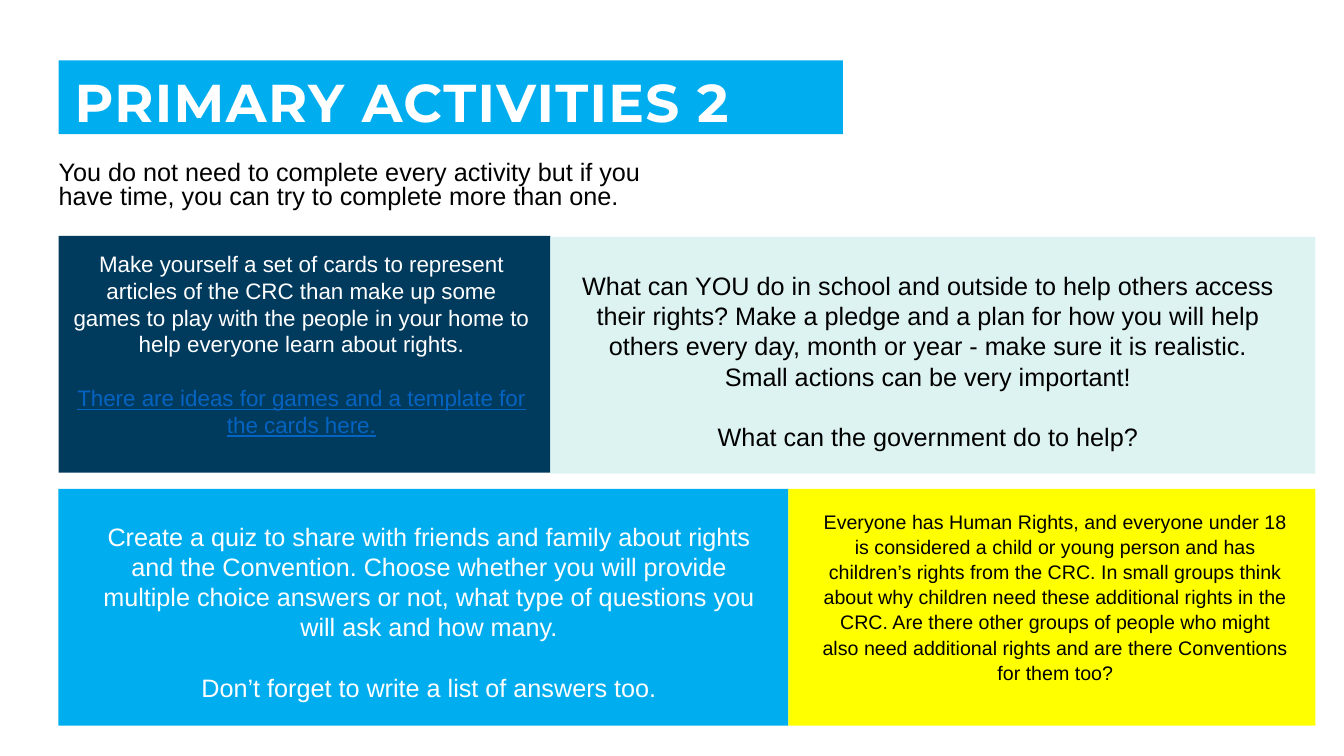
from dataclasses import dataclass

from lxml.etree import SubElement
from pptx import Presentation
from pptx.dml.color import RGBColor
from pptx.enum.shapes import MSO_SHAPE
from pptx.enum.text import MSO_ANCHOR, MSO_AUTO_SIZE, PP_ALIGN
from pptx.oxml.ns import qn
from pptx.util import Pt

NAVY, BLUE, MINT, YELLOW = "003B5E", "00AEEF", "DDF3F1", "FFFF00"
WHITE, BLACK, LINK = "FFFFFF", "000000", "0563C1"
LEFT = 41.8
PANEL_HEIGHT = 169.2
LINE_HEIGHT = 1.2  # one text line as a multiple of the font size


@dataclass
class Panel:
    left: float
    top: float
    width: float
    fill: str


@dataclass
class Para:
    text: str
    color: str
    underline: bool = False


@dataclass
class Activity:
    left: float
    top: float
    width: float
    height: float
    size: float
    paras: list[Para]
    spacing: float = 1.0


PANELS = [
    Panel(LEFT, 168.5, 351.4, NAVY),
    Panel(LEFT, 349.2, 521.3, BLUE),
    Panel(393.2, 169.2, 546.4, MINT),
    Panel(563.1, 349.2, 376.5, YELLOW),
]

ACTIVITIES = [
    Activity(56.2, 368.6, 500.4, 138.2, 18, [
        Para("Create a quiz to share with friends and family about rights and the "
             "Convention. Choose whether you will provide multiple choice answers or "
             "not, what type of questions you will ask and how many.", WHITE),
        Para("Don’t forget to write a list of answers too.", WHITE),
    ]),
    Activity(578.9, 359.3, 349.9, 133.2, 14, [
        Para("Everyone has Human Rights, and everyone under 18 is considered a child or "
             "young person and has children’s rights from the CRC. In small groups think "
             "about why children need these additional rights in the CRC. Are there other "
             "groups of people who might also need additional rights and are there "
             "Conventions for them too?", BLACK),
    ], spacing=1.07),
    Activity(407.5, 189.4, 510.5, 138.2, 18, [
        Para("What can YOU do in school and outside to help others access their rights? "
             "Make a pledge and a plan for how you will help others every day, month or "
             "year - make sure it is realistic. Small actions can be very important!", BLACK),
        Para("What can the government do to help?", BLACK),
    ]),
    Activity(43.2, 175, 344.2, 143.3, 16, [
        Para("Make yourself a set of cards to represent articles of the CRC than make up "
             "some games to play with the people in your home to help everyone learn "
             "about rights.", WHITE),
        Para("There are ideas for games and a template for the cards here.", LINK, True),
    ]),
]


def rgb(color: str) -> RGBColor:
    return RGBColor.from_string(color)


def place(sp, left: float, top: float, width: float, height: float) -> None:
    sp.left, sp.top, sp.width, sp.height = Pt(left), Pt(top), Pt(width), Pt(height)


def set_frame(tf, insets: tuple[float, float, float, float], anchor=MSO_ANCHOR.TOP) -> None:
    tf.word_wrap = True
    tf.auto_size = MSO_AUTO_SIZE.NONE
    tf.vertical_anchor = anchor
    tf.margin_left, tf.margin_top, tf.margin_right, tf.margin_bottom = map(Pt, insets)


def add_run(p, text: str, size: float, color: str, font: str = "Arial"):
    r = p.add_run()
    r.text = text
    r.font.name, r.font.size = font, Pt(size)
    r.font.color.rgb = rgb(color)
    return r


def format_para(p, align, spacing: float, before: float = 0) -> None:
    p.alignment = align
    p.line_spacing = spacing
    p.space_before = Pt(before)


def add_panel(slide, panel: Panel) -> None:
    sp = slide.shapes.add_shape(MSO_SHAPE.RECTANGLE, Pt(panel.left), Pt(panel.top),
                                Pt(panel.width), Pt(PANEL_HEIGHT))
    sp.shadow.inherit = False
    sp.fill.solid()
    sp.fill.fore_color.rgb = rgb(panel.fill)
    sp.line.fill.background()


def add_activity(slide, act: Activity) -> None:
    sp = slide.shapes.add_textbox(Pt(act.left), Pt(act.top), Pt(act.width), Pt(act.height))
    tf = sp.text_frame
    set_frame(tf, (7.2, 3.6, 7.2, 3.6))
    for i, para in enumerate(act.paras):
        p = tf.add_paragraph() if i else tf.paragraphs[0]
        format_para(p, PP_ALIGN.CENTER, act.spacing, act.size * LINE_HEIGHT if i else 0)
        r = add_run(p, para.text, act.size, para.color)
        if para.underline:
            r.font.underline = True


def fill_title(sp) -> None:
    place(sp, LEFT, 43.2, 560.2, 52.6)
    sp.fill.solid()
    sp.fill.fore_color.rgb = rgb(BLUE)
    set_frame(sp.text_frame, (11.5, 11.5, 8.6, 0), MSO_ANCHOR.MIDDLE)
    p = sp.text_frame.paragraphs[0]
    format_para(p, PP_ALIGN.LEFT, 0.9)
    r = add_run(p, "PRIMARY ACTIVITIES 2", 38, WHITE, "Montserrat")
    r.font.bold = True
    r.font._element.set("spc", "100")


def fill_intro(sp) -> None:
    place(sp, LEFT, 112.3, 447.1, 44.6)
    set_frame(sp.text_frame, (0, 3.6, 7.2, 3.6))
    p = sp.text_frame.paragraphs[0]
    format_para(p, PP_ALIGN.LEFT, 0.8)
    # Plain text without bullet or hanging indent
    pPr = p._p.get_or_add_pPr()
    pPr.set("marL", "0")
    pPr.set("indent", "0")
    SubElement(pPr, qn("a:buNone"))
    add_run(p, "You do not need to complete every activity but if you have time, "
               "you can try to complete more than one.", 18, BLACK)


def main() -> None:
    prs = Presentation()
    prs.slide_width, prs.slide_height = Pt(960), Pt(540)
    slide = prs.slides.add_slide(prs.slide_layouts[1])

    # Heading and introduction
    fill_title(slide.shapes.title)
    fill_intro(slide.placeholders[1])

    # Coloured panels
    for panel in PANELS:
        add_panel(slide, panel)

    # Activity texts
    for act in ACTIVITIES:
        add_activity(slide, act)

    prs.save("out.pptx")


if __name__ == "__main__":
    main()
